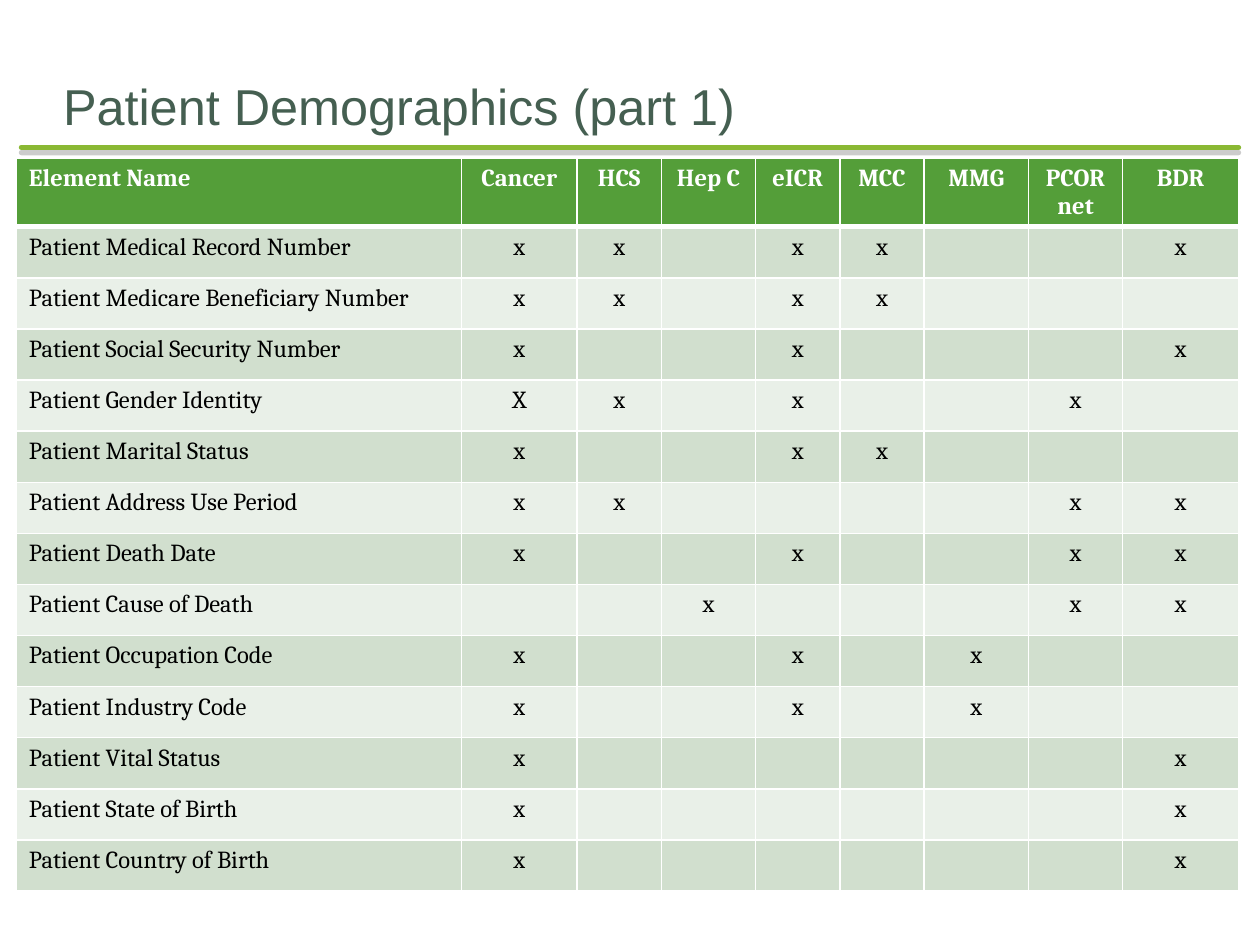
from lxml import etree
from pptx import Presentation
from pptx import util as u
from pptx.dml.color import RGBColor
from pptx.enum import shapes, text
from pptx.oxml import ns

WIDTH, HEIGHT = u.Inches(10), u.Inches(7.5)
HEADINGS = ["Element Name", "Cancer", "HCS", "Hep C", "eICR", "MCC", "MMG", "PCORnet", "BDR"]
COLUMNS = [3.54, 0.92, 0.67, 0.75, 0.67, 0.67, 0.83, 0.75, 0.92]
ELEMENTS = [
    ("Medical Record Number", "xx-xx--x"),
    ("Medicare Beneficiary Number", "xx-xx---"),
    ("Social Security Number", "x--x---x"),
    ("Gender Identity", "Xx-x--x-"),
    ("Marital Status", "x--xx---"),
    ("Address Use Period", "xx----xx"),
    ("Death Date", "x--x--xx"),
    ("Cause of Death", "--x---xx"),
    ("Occupation Code", "x--x-x--"),
    ("Industry Code", "x--x-x--"),
    ("Vital Status", "x------x"),
    ("State of Birth", "x------x"),
    ("Country of Birth", "x------x"),
]


def color(value):
    return RGBColor.from_string(value)


def share(left, top, width, height):
    return [u.Emu(round(part * size)) for part, size in
            zip((left, top, width, height), (WIDTH, HEIGHT, WIDTH, HEIGHT))]


def element(parent, tag, **attributes):
    return etree.SubElement(parent, ns.qn(tag), attributes)


def write(frame, words, size=14, font="Cambria", ink="000000", bold=False,
          align=text.PP_ALIGN.LEFT):
    para = frame.paragraphs[0]
    para.alignment = align
    span = para.add_run()
    span.text = words
    span.font.size = u.Pt(size)
    span.font.name = font
    span.font.bold = bold
    span.font.color.rgb = color(ink)


def add_title(page, box):
    title = page.shapes.title
    title.left, title.top, title.width, title.height = box
    frame = title.text_frame
    frame.word_wrap = True
    frame.auto_size = text.MSO_AUTO_SIZE.NONE
    frame.vertical_anchor = text.MSO_ANCHOR.BOTTOM
    frame.margin_left = frame.margin_right = frame.margin_bottom = 0
    frame.margin_top = u.Inches(0.05)
    write(frame, "Patient Demographics (part 1)", size=28.8, font="Arial", ink="455F51")


def add_rule(page, box):
    left, top, width, height = box
    rule = page.shapes.add_connector(shapes.MSO_CONNECTOR.STRAIGHT,
                                     left, top, left + width, top + height)
    rule.line.color.rgb = color("8AB833")
    rule.line.width = u.Pt(3)
    rule.line._get_or_add_ln().set("cap", "rnd")
    effects = element(rule._element.spPr, "a:effectLst")
    shadow = element(effects, "a:outerShdw", blurRad="0", dist=str(u.Pt(3)),
                     dir="5400000", rotWithShape="0")
    tint = element(shadow, "a:srgbClr", val="808080")
    element(tint, "a:alpha", val="40000")


def add_borders(cell, bottom):
    properties = cell._tc.get_or_add_tcPr()
    for side, weight in (("L", 1), ("R", 1), ("T", 1), ("B", bottom)):
        border = element(properties, f"a:ln{side}", w=str(u.Pt(weight)))
        fill = element(border, "a:solidFill")
        element(fill, "a:srgbClr", val="FFFFFF")


def add_matrix(page, box):
    rows = [HEADINGS] + [[f"Patient {name}"] + list(marks.replace("-", " "))
                         for name, marks in ELEMENTS]
    table = page.shapes.add_table(len(rows), len(COLUMNS), *box).table
    for column, part in zip(table.columns, COLUMNS):
        column.width = round(box[2] * part / sum(COLUMNS))
    for row, values in enumerate(rows):
        header = row == 0
        shade = "549E39" if header else ("E9F0E8", "D1DFCE")[row % 2]
        for column, value in enumerate(values):
            cell = table.cell(row, column)
            add_borders(cell, 3 if header else 1)
            cell.fill.solid()
            cell.fill.fore_color.rgb = color(shade)
            if value.strip():
                write(cell.text_frame, value, bold=header,
                      ink="FFFFFF" if header else "000000",
                      align=text.PP_ALIGN.CENTER if column else text.PP_ALIGN.LEFT)


def main():
    deck = Presentation()
    deck.slide_width, deck.slide_height = WIDTH, HEIGHT
    page = deck.slides.add_slide(deck.slide_layouts.get_by_name("Title Only"))
    add_rule(page, share(0.017, 0.156, 0.966, 0))
    add_title(page, share(0.05, 0.067, 0.9, 0.077))
    add_matrix(page, share(0.013, 0.167, 0.97, 0.757))
    deck.save("out.pptx")


if __name__ == "__main__":
    main()
